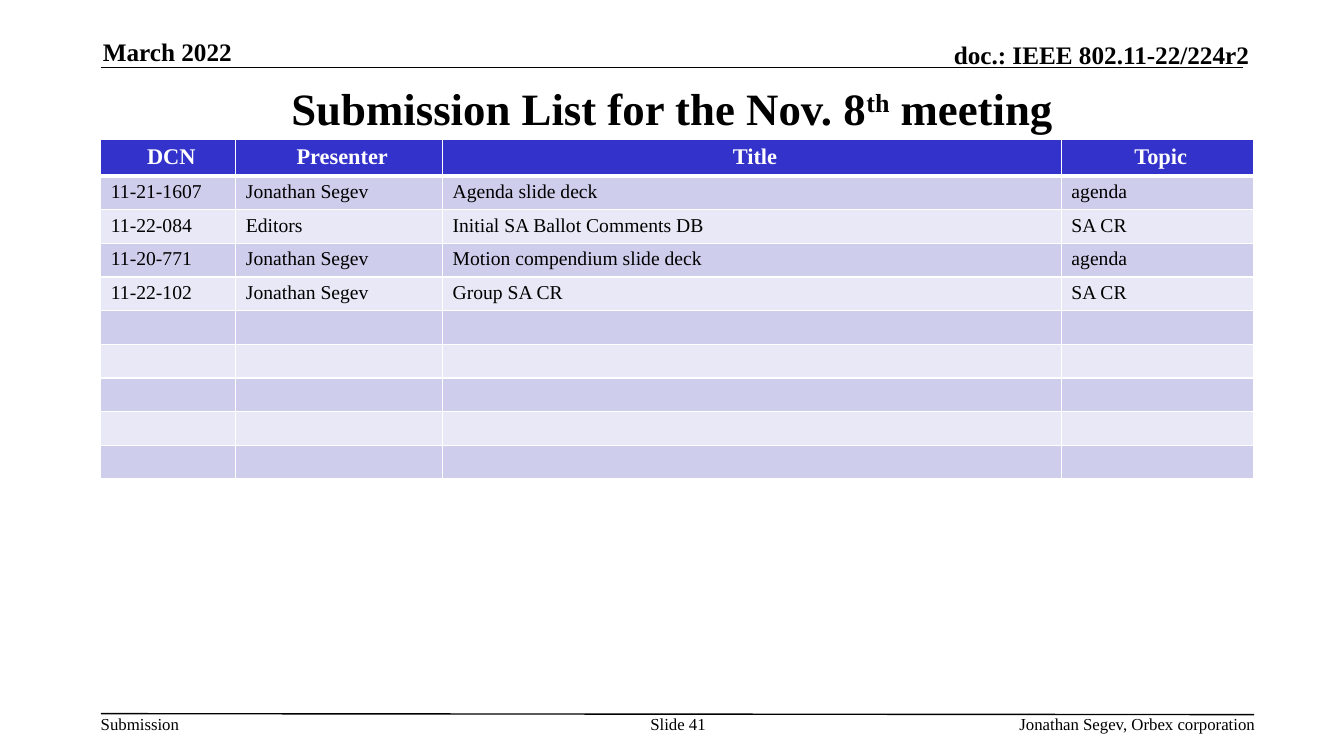
from lxml import etree
from pptx import Presentation
from pptx.dml.color import RGBColor
from pptx.enum.shapes import MSO_CONNECTOR
from pptx.enum.text import MSO_ANCHOR, MSO_AUTO_SIZE, PP_ALIGN
from pptx.oxml.ns import qn
from pptx.util import Inches, Pt

LEFT, CENTER, RIGHT = PP_ALIGN.LEFT, PP_ALIGN.CENTER, PP_ALIGN.RIGHT
TOP, MIDDLE, BOTTOM = MSO_ANCHOR.TOP, MSO_ANCHOR.MIDDLE, MSO_ANCHOR.BOTTOM
STRAIGHT = MSO_CONNECTOR.STRAIGHT
NO_FIT = MSO_AUTO_SIZE.NONE

WIDTH, HEIGHT = 13.33, 7.5
FONT = "Times New Roman"
BLACK, WHITE, HEADER = "000000", "FFFFFF", "3333CC"
BANDS = ["E8E8F6", "CECEEC"]

MARGIN, FOOTER_ROW = 7.5, 94.4
TABLE_COLS = [10.05, 15.38, 46.05, 14.33]
HEADER_ROW, BODY_ROW, ROW_COUNT = 4.55, 4.2, 10
SUBMISSIONS = [
    ["DCN", "Presenter", "Title", "Topic"],
    ["11-21-1607", "Jonathan Segev", "Agenda slide deck", "agenda"],
    ["11-22-084", "Editors", "Initial SA Ballot Comments DB", "SA CR"],
    ["11-20-771", "Jonathan Segev", "Motion compendium slide deck", "agenda"],
    ["11-22-102", "Jonathan Segev", "Group SA CR", "SA CR"],
]


def col(n):
    return Inches(WIDTH * n / 100)


def row(n):
    return Inches(HEIGHT * n / 100)


def rgb(value):
    return RGBColor.from_string(value)


def add_run(p, text, size, bold=False, color=BLACK):
    r = p.add_run()
    r.text = text
    r.font.name = FONT
    r.font.size = Pt(size)
    r.font.bold = bold
    r.font.color.rgb = rgb(color)
    return r


def add_label(s, x, y, w, h, text, size=12, bold=False, align=LEFT, anchor=TOP, wrap=True):
    tf = s.shapes.add_textbox(col(x), row(y), col(w), row(h)).text_frame
    tf.word_wrap = wrap
    tf.vertical_anchor = anchor
    tf.margin_left = tf.margin_right = tf.margin_top = tf.margin_bottom = 0
    p = tf.paragraphs[0]
    p.alignment = align
    add_run(p, text, size, bold)


def add_rule(s, x1, y1, x2, y2):
    line = s.shapes.add_connector(STRAIGHT, col(x1), row(y1), col(x2), row(y2))
    line.line.color.rgb = rgb(BLACK)
    line.line.width = Pt(1)
    etree.SubElement(line._element.spPr, qn("a:effectLst"))


def set_title(s):
    sp = s.shapes.title
    sp.left, sp.top, sp.width, sp.height = col(MARGIN), row(10), col(85), row(8.53)
    tf = sp.text_frame
    tf.auto_size = NO_FIT
    tf.word_wrap = True
    tf.vertical_anchor = MIDDLE
    p = tf.paragraphs[0]
    p.alignment = CENTER
    add_run(p, "Submission List for the Nov. 8", 32, True)
    r = add_run(p, "th", 32, True)
    r._r.get_or_add_rPr().set("baseline", "30000")
    add_run(p, " meeting", 32, True)


def set_borders(cell, top=1, bottom=1):
    tc_pr = cell._tc.get_or_add_tcPr()
    for side, width in (("L", 1), ("R", 1), ("T", top), ("B", bottom)):
        ln = etree.SubElement(tc_pr, qn("a:ln" + side), w=str(Pt(width)))
        fill = etree.SubElement(ln, qn("a:solidFill"))
        etree.SubElement(fill, qn("a:srgbClr"), val=WHITE)


def fill_cell(cell, i, text):
    header = i == 0
    set_borders(cell, 3 if i == 1 else 1, 3 if header else 1)
    cell.fill.solid()
    cell.fill.fore_color.rgb = rgb(HEADER if header else BANDS[i % 2])
    cell.margin_left = Inches(0.1)
    cell.margin_right = Inches(0.04 if header else 0.1)
    cell.margin_top = cell.margin_bottom = Inches(0.05)
    p = cell.text_frame.paragraphs[0]
    if header:
        p.alignment = CENTER
        add_run(p, text, 16, True, WHITE)
    elif text:
        add_run(p, text, 14)
    else:
        end = etree.SubElement(p._p, qn("a:endParaRPr"), sz="1400")
        etree.SubElement(end, qn("a:latin"), typeface=FONT)


def add_submissions(s):
    height = HEADER_ROW + BODY_ROW * (ROW_COUNT - 1)
    table = s.shapes.add_table(ROW_COUNT, len(TABLE_COLS), col(MARGIN), row(18.4),
                               col(sum(TABLE_COLS)), row(height)).table
    for j, width in enumerate(TABLE_COLS):
        table.columns[j].width = col(width)
    blank = [""] * len(TABLE_COLS)
    for i in range(ROW_COUNT):
        table.rows[i].height = row(BODY_ROW if i else HEADER_ROW)
        texts = SUBMISSIONS[i] if i < len(SUBMISSIONS) else blank
        for j, text in enumerate(texts):
            fill_cell(table.cell(i, j), i, text)


def main():
    prs = Presentation()
    prs.slide_width, prs.slide_height = Inches(WIDTH), Inches(HEIGHT)
    s = prs.slides.add_slide(prs.slide_layouts.get_by_name("Title Only"))
    add_rule(s, MARGIN, 8.93, 92.5, 8.93)
    add_rule(s, MARGIN, FOOTER_ROW, 93.32, 94.53)
    add_label(s, 7.65, 4.8, 20.48, 4, "March 2022", 18, True, anchor=BOTTOM)
    add_label(s, 54.69, 5.2, 38.26, 4, "doc.: IEEE 802.11-22/224r2", 18, True, RIGHT, BOTTOM)
    set_title(s)
    add_submissions(s)
    add_label(s, MARGIN, FOOTER_ROW, 5.93, 2.67, "Submission", wrap=False)
    add_label(s, 47.56, FOOTER_ROW, 5.78, 5.33, "Slide 41", align=CENTER)
    add_label(s, 58.59, FOOTER_ROW, 34.81, 2.67, "Jonathan Segev, Orbex corporation", align=RIGHT)
    prs.save("out.pptx")


if __name__ == "__main__":
    main()
